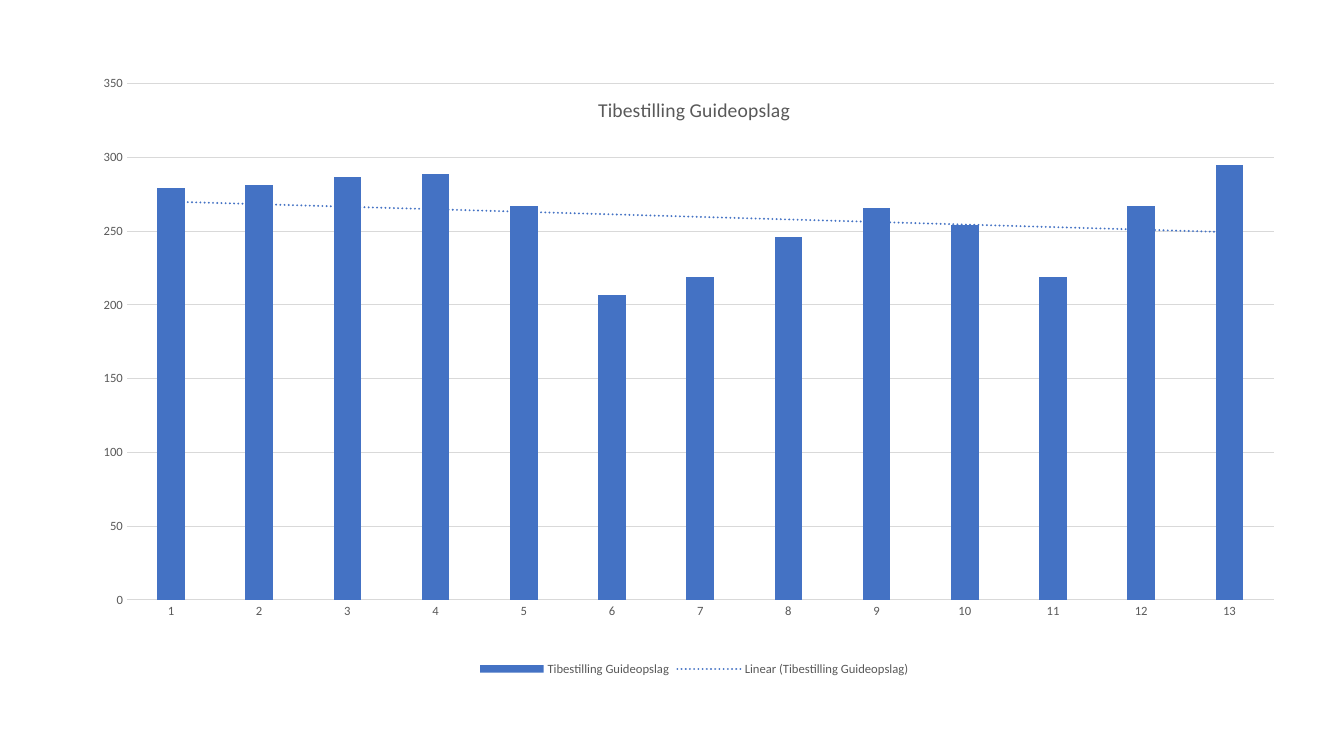
from dataclasses import dataclass

from lxml import etree
from pptx import Presentation
from pptx.chart.data import CategoryChartData
from pptx.dml.color import RGBColor
from pptx.enum.chart import XL_CHART_TYPE, XL_LEGEND_POSITION, XL_TICK_MARK
from pptx.oxml import parse_xml
from pptx.oxml.ns import nsdecls, qn
from pptx.util import Inches, Pt

COLUMN = XL_CHART_TYPE.COLUMN_CLUSTERED
BOTTOM = XL_LEGEND_POSITION.BOTTOM
NO_TICK = XL_TICK_MARK.NONE

COLORS = {"bar": "4472C4", "grid": "D9D9D9", "text": "595959"}
FACE = "Calibri"
TITLE = "Tibestilling Guideopslag"
VALUES = (279, 281, 287, 289, 267, 207, 219, 246, 266, 254, 219, 267, 295)


@dataclass(frozen=True)
class Box:
    """Bounds in percent of the surrounding area."""
    left: float
    top: float
    width: float
    height: float


FRAME = Box(6.6, 10, 90.1, 80)
PLOT = Box(3.15, 1.35, 94.7, 85.35)


def color(name: str) -> RGBColor:
    return RGBColor.from_string(COLORS[name])


def style_font(font, size: float) -> None:
    font.name = FACE
    font.size = Pt(size)
    font.bold = False
    font.color.rgb = color("text")


def style_line(line) -> None:
    line.color.rgb = color("grid")
    line.width = Pt(0.75)


def place_plot(chart, box: Box) -> None:
    """Fix the inner plot area within the chart."""
    area = chart.element.find(".//" + qn("c:plotArea"))
    for old in area.findall(qn("c:layout")):
        area.remove(old)
    layout = etree.Element(qn("c:layout"))
    manual = etree.SubElement(layout, qn("c:manualLayout"))
    for tag, val in (("layoutTarget", "inner"), ("xMode", "edge"),
                     ("yMode", "edge")):
        etree.SubElement(manual, qn("c:" + tag)).set("val", val)
    for tag, share in (("x", box.left), ("y", box.top),
                       ("w", box.width), ("h", box.height)):
        part = etree.SubElement(manual, qn("c:" + tag))
        part.set("val", f"{share / 100:.4f}")
    area.insert(0, layout)


def add_trend(chart) -> None:
    """Add a dotted linear trend line to the series."""
    trend = parse_xml(
        f'<c:trendline {nsdecls("c", "a")}>'
        f'<c:spPr><a:ln w="{Pt(1.5)}" cap="rnd"><a:solidFill>'
        f'<a:srgbClr val="{COLORS["bar"]}"/></a:solidFill>'
        '<a:prstDash val="sysDot"/></a:ln></c:spPr>'
        '<c:trendlineType val="linear"/>'
        '<c:dispRSqr val="0"/><c:dispEq val="0"/></c:trendline>')
    chart.element.find(".//" + qn("c:cat")).addprevious(trend)


def style_axes(chart) -> None:
    cats, vals = chart.category_axis, chart.value_axis
    for axis in (cats, vals):
        axis.major_tick_mark = axis.minor_tick_mark = NO_TICK
        style_font(axis.tick_labels.font, 9)
    style_line(cats.format.line)
    vals.format.line.fill.background()
    vals.has_major_gridlines = True
    style_line(vals.major_gridlines.format.line)


def style_text(chart) -> None:
    style_font(chart.font, 10)
    chart.has_title = True
    frame = chart.chart_title.text_frame
    frame.text = TITLE
    style_font(frame.paragraphs[0].runs[0].font, 14)
    chart.has_legend = True
    chart.legend.position = BOTTOM
    chart.legend.include_in_layout = False
    style_font(chart.legend.font, 9)


def add_bars(deck, slide, box: Box) -> None:
    data = CategoryChartData()
    data.categories = range(1, len(VALUES) + 1)
    data.add_series(TITLE, VALUES)
    wide, high = deck.slide_width / 100, deck.slide_height / 100
    chart = slide.shapes.add_chart(
        COLUMN, int(box.left * wide), int(box.top * high),
        int(box.width * wide), int(box.height * high), data).chart
    plot = chart.plots[0]
    plot.gap_width, plot.overlap = 219, -27
    plot.vary_by_categories = False
    fill = plot.series[0].format.fill
    fill.solid()
    fill.fore_color.rgb = color("bar")
    style_text(chart)
    style_axes(chart)
    place_plot(chart, PLOT)
    add_trend(chart)


def main() -> None:
    deck = Presentation()
    deck.slide_width, deck.slide_height = Inches(13.33), Inches(7.5)
    slide = deck.slides.add_slide(deck.slide_layouts[6])
    add_bars(deck, slide, FRAME)
    deck.save("out.pptx")


if __name__ == "__main__":
    main()
